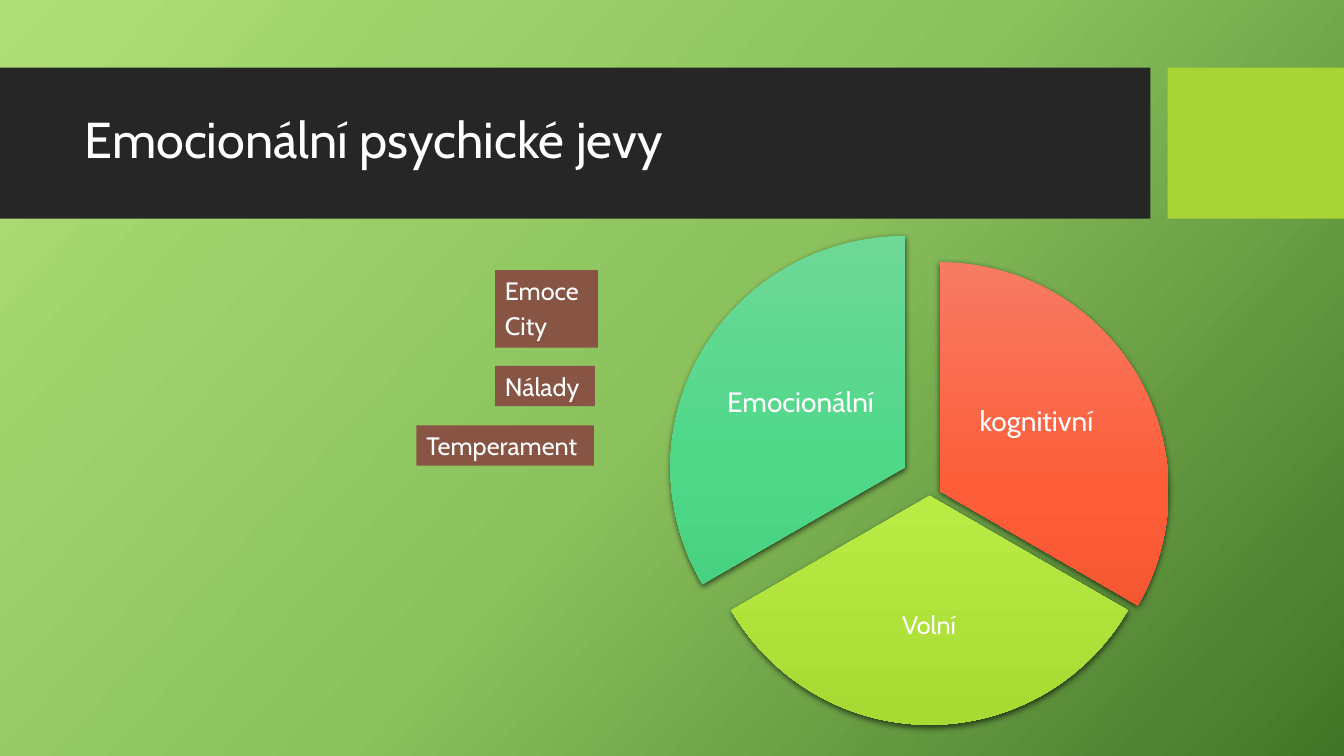
from lxml import etree
from pptx import Presentation
from pptx.dml.color import RGBColor
from pptx.enum import shapes, text
from pptx.oxml.ns import qn
from pptx.util import Inches, Pt

FONT = "Cabin"
COLORS = {"band": "262626", "accent": "A7D535", "tag": "885444",
          "text": "FFFFFF", "shadow": "000000"}
BACKGROUND = ["AFDE77", "8BC25D", "437528"]
TITLE = "Emocionální psychické jevy"
BANDS = [((0, 0.67, 11.41, 1.5), "band"), ((11.58, 0.67, 1.75, 1.5), "accent")]
# label, size, label box, slice box, start and end angle, gradient
SLICES = [
    ("kognitivní", 20, (9.51, 3.44, 1.54, 1.51), (7.05, 2.6, 4.54, 4.54),
     (270, 30), ["F77A63", "FD5E39", "EB4E29"]),
    ("Volní", 18, (8.19, 5.51, 2.05, 1.4), (6.95, 2.65, 4.54, 4.54),
     (30, 150), ["BDE867", "B8EB43", "A7DA33"]),
    ("Emocionální", 20, (7.15, 3.24, 1.58, 1.53), (6.65, 2.34, 4.65, 4.59),
     (150, 270), ["6ED897", "4ED888", "3EC778"]),
]
TAGS = [
    (["Emoce", "City"], (4.91, 2.68, 1.02, 0.77), True),
    (["Nálady"], (4.91, 3.63, 0.99, 0.4), False),
    (["Temperament"], (4.13, 4.22, 1.76, 0.4), False),
]


def box(values):
    return [Inches(v) for v in values]


def add_text(sp, lines, size=18, align=text.PP_ALIGN.LEFT, anchor=text.MSO_ANCHOR.TOP,
             inset=None, spacing=1.0, gap=0, wrap=True):
    tf = sp.text_frame
    tf.word_wrap = wrap
    tf.auto_size = text.MSO_AUTO_SIZE.NONE
    tf.vertical_anchor = anchor
    if inset is not None:
        tf.margin_left = tf.margin_right = Inches(inset)
        tf.margin_top = tf.margin_bottom = Inches(inset)
    for i, line in enumerate(lines):
        p = tf.add_paragraph() if i else tf.paragraphs[0]
        p.alignment = align
        p.line_spacing = spacing
        p.space_before = Pt(gap if i else 0)
        r = p.add_run()
        r.text = line
        r.font.name = FONT
        r.font.size = Pt(size)
        r.font.color.rgb = RGBColor.from_string(COLORS["text"])


def add_solid(parent, kind, place, color=None):
    sp = parent.add_shape(kind, *box(place))
    sp.shadow.inherit = False
    sp.line.fill.background()
    if color:
        sp.fill.solid()
        sp.fill.fore_color.rgb = RGBColor.from_string(COLORS[color])
    return sp


def set_gradient(fill, element, colors, angle):
    """Spread the colours evenly, at a clockwise angle."""
    fill.gradient()
    fill.gradient_angle = 360 - angle
    stops = next(element.iter(qn("a:gsLst")))
    for old in list(stops):
        stops.remove(old)
    for i, color in enumerate(colors):
        gs = etree.SubElement(stops, qn("a:gs"), pos=str(100000 * i // (len(colors) - 1)))
        etree.SubElement(gs, qn("a:srgbClr"), val=color)


def add_shadow(sp):
    effects = sp._element.spPr.find(qn("a:effectLst"))
    shadow = etree.SubElement(effects, qn("a:outerShdw"), blurRad=str(Pt(4.5)),
                              dist=str(Pt(1.5)), dir="5400000", rotWithShape="0")
    color = etree.SubElement(shadow, qn("a:srgbClr"), val=COLORS["shadow"])
    etree.SubElement(color, qn("a:alpha"), val="63000")


def main():
    prs = Presentation()
    prs.slide_width, prs.slide_height = Inches(13.33), Inches(7.5)
    slide = prs.slides.add_slide(prs.slide_layouts[5])
    set_gradient(slide.background.fill, slide._element, BACKGROUND, 42)

    rect = shapes.MSO_SHAPE.RECTANGLE
    for place, color in BANDS:
        add_solid(slide.shapes, rect, place, color)

    title = slide.shapes.title
    title.left, title.top, title.width, title.height = box((0.74, 0.82, 10.51, 1.18))
    add_text(title, [TITLE], size=36, anchor=text.MSO_ANCHOR.MIDDLE, spacing=0.9)
    slide.shapes._spTree.append(title._element)  # in front of the bands

    pie = slide.shapes.add_group_shape().shapes
    for label, size, label_box, slice_box, angles, colors in SLICES:
        sp = add_solid(pie, shapes.MSO_SHAPE.PIE, slice_box)
        for i, angle in enumerate(angles):
            sp.adjustments[i] = angle * 0.6
        set_gradient(sp.fill, sp._element, colors, 90)
        add_shadow(sp)
        add_text(pie.add_textbox(*box(label_box)), [label], size=size,
                 align=text.PP_ALIGN.CENTER, anchor=text.MSO_ANCHOR.MIDDLE,
                 inset=0.03, spacing=0.9)

    for lines, place, wrap in TAGS:
        add_text(add_solid(slide.shapes, rect, place, "tag"), lines, gap=3.6, wrap=wrap)

    prs.save("out.pptx")


if __name__ == "__main__":
    main()
